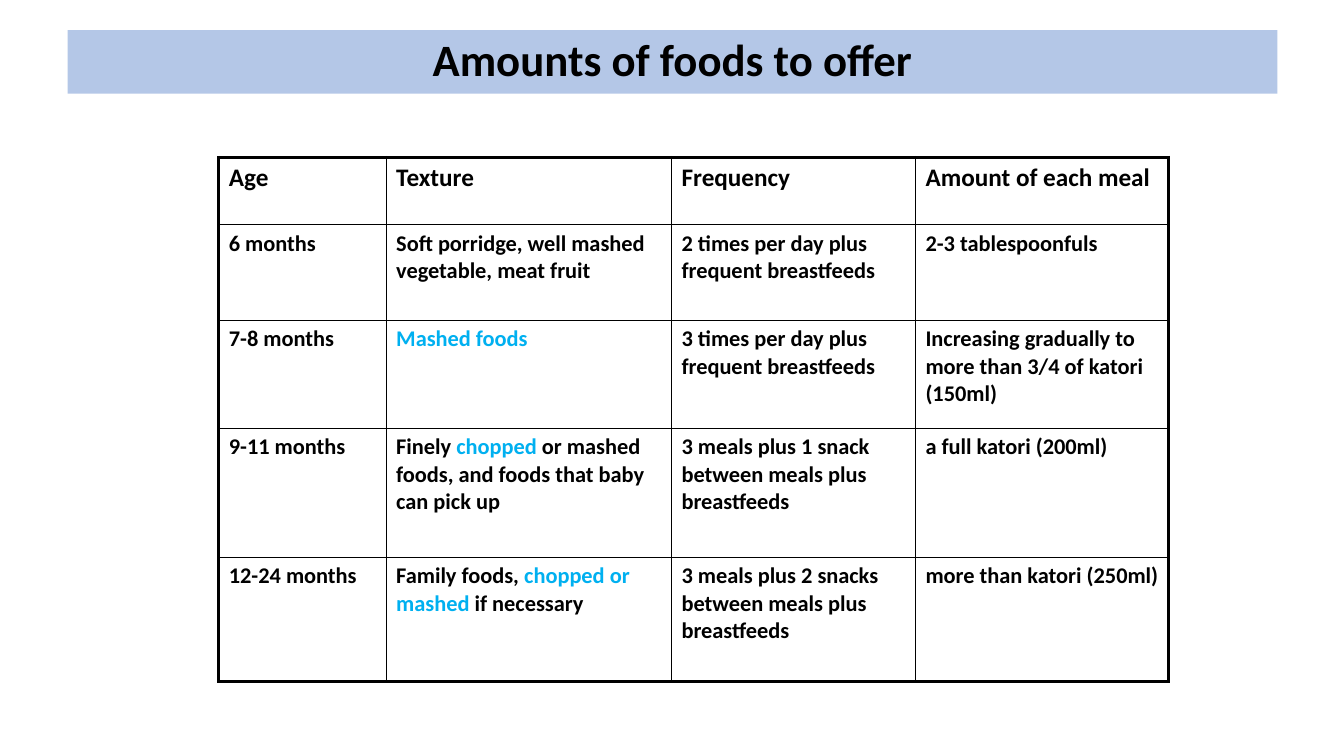
from lxml.etree import SubElement
from pptx import Presentation
from pptx.dml.color import RGBColor
from pptx.enum.shapes import MSO_SHAPE as Shape
from pptx.enum.text import MSO_ANCHOR as Anchor, PP_ALIGN as Align
from pptx.oxml.ns import qn
from pptx.util import Emu, Pt

# Content: text between asterisks is highlighted
TITLE = "Amounts of foods to offer"
ROWS = [
    ("Age", "Texture", "Frequency", "Amount of each meal"),
    ("6 months", "Soft porridge, well mashed vegetable, meat fruit",
     "2 times per day plus frequent breastfeeds", "2-3 tablespoonfuls"),
    ("7-8 months", "*Mashed foods*", "3 times per day plus frequent breastfeeds",
     "Increasing gradually to more than 3/4 of katori (150ml)"),
    ("9-11 months", "Finely *chopped* or mashed foods, and foods that baby can pick up",
     "3 meals plus 1 snack between meals plus breastfeeds", "a full katori (200ml)"),
    ("12-24 months", "Family foods, *chopped or mashed *if necessary",
     "3 meals plus 2 snacks between meals plus breastfeeds", "more than katori (250ml)"),
]

# Layout in px, 100 to the inch
PX = 9144
PAGE_SIZE = (1333, 750)
BANNER = (67, 30, 1200, 63)
TABLE_CORNER = (217, 156)
COLUMN_WIDTHS = (166, 283, 242, 251)
ROW_HEIGHTS = (67, 95, 107, 128, 123)

THEME = {
    "font": "Calibri",
    "ink": "000000", "highlight": "00B0F0", "banner": "B4C7E7",
    "title": 32, "header": 18, "body": 16,
    "frame": 2.25, "rule": 1,
}


def emu(*lengths):
    return [Emu(length * PX) for length in lengths]


def add_span(para, text, size, color="ink"):
    span = para.add_run()
    span.text = text
    formats = {"name": THEME["font"], "size": Pt(THEME[size]), "bold": True}
    for name, value in formats.items():
        setattr(span.font, name, value)
    span.font.color.rgb = RGBColor.from_string(THEME[color])


def add_border(cell, side, weight):
    line = SubElement(cell._tc.get_or_add_tcPr(), qn(f"a:ln{side}"),
                      w=str(Pt(THEME[weight])))
    fill = SubElement(line, qn("a:solidFill"))
    SubElement(fill, qn("a:srgbClr"), val=THEME["ink"])


def add_banner(page):
    box = page.shapes.add_shape(Shape.RECTANGLE, *emu(*BANNER))
    box.shadow.inherit = False
    box.fill.solid()
    box.fill.fore_color.rgb = RGBColor.from_string(THEME["banner"])
    box.line.fill.background()
    frame = box.text_frame
    frame.word_wrap = True
    frame.vertical_anchor = Anchor.MIDDLE
    para = frame.paragraphs[0]
    para.alignment = Align.CENTER
    para.line_spacing = 0.9
    add_span(para, TITLE, "title")


def fill_cell(cell, text, row, column):
    # Heavy outer frame, thin inner rules
    edges = {"L": column == 0, "R": column == len(COLUMN_WIDTHS) - 1,
             "T": row == 0, "B": row == len(ROWS) - 1}
    for side, outer in edges.items():
        add_border(cell, side, "frame" if outer else "rule")
    cell.fill.background()

    # Space before is a share of the line height
    para = cell.text_frame.paragraphs[0]
    para.alignment = Align.LEFT
    space = SubElement(para._p.get_or_add_pPr(), qn("a:spcBef"))
    SubElement(space, qn("a:spcPct"), val="20000")
    for index, part in enumerate(text.split("*")):
        if part:
            add_span(para, part, "body" if row else "header",
                     "highlight" if index % 2 else "ink")


def add_food_table(page):
    size = (sum(COLUMN_WIDTHS), sum(ROW_HEIGHTS))
    table = page.shapes.add_table(len(ROWS), len(COLUMN_WIDTHS),
                                  *emu(*TABLE_CORNER, *size)).table
    table.first_row = table.horz_banding = False
    for column, width in zip(table.columns, emu(*COLUMN_WIDTHS)):
        column.width = width
    for row, height in zip(table.rows, emu(*ROW_HEIGHTS)):
        row.height = height
    for row, texts in enumerate(ROWS):
        for column, text in enumerate(texts):
            fill_cell(table.cell(row, column), text, row, column)


def main():
    deck = Presentation()
    deck.slide_width, deck.slide_height = emu(*PAGE_SIZE)
    page = deck.slides.add_slide(deck.slide_layouts[6])
    add_banner(page)
    add_food_table(page)
    deck.save("out.pptx")


if __name__ == "__main__":
    main()
